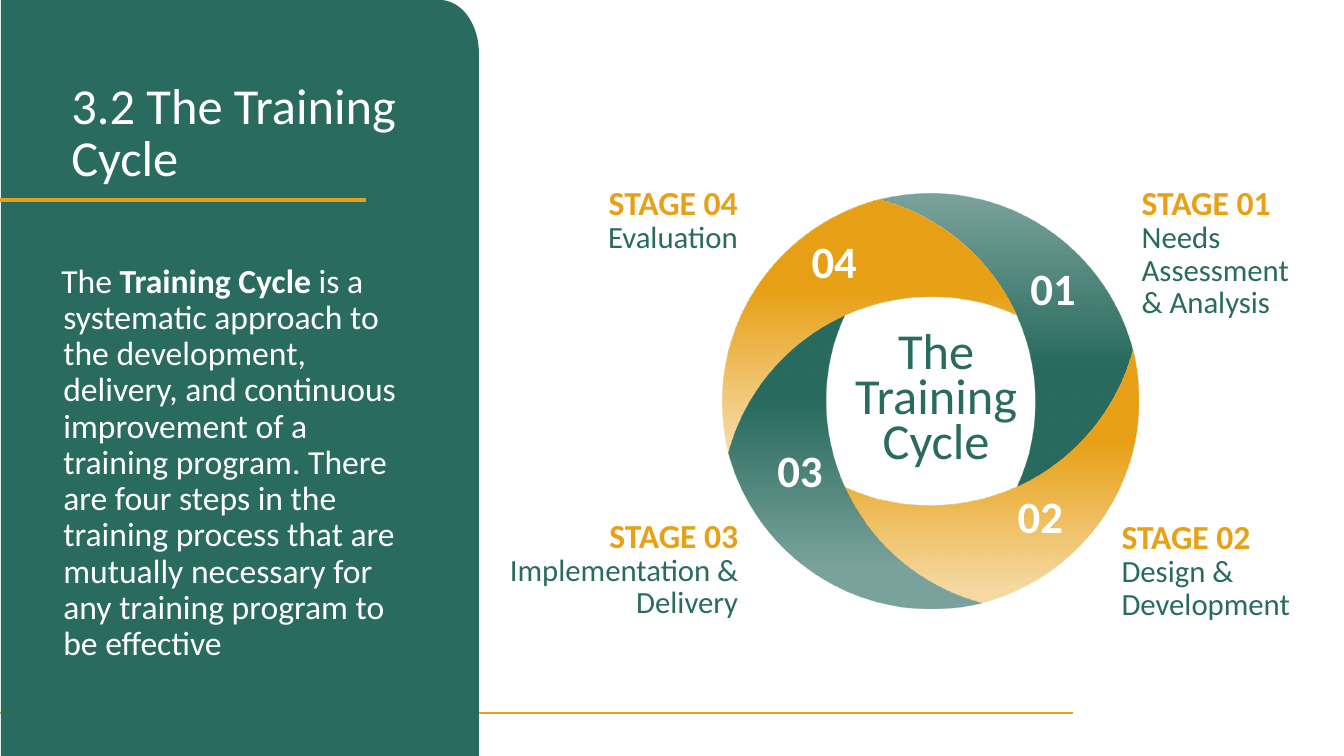
from dataclasses import dataclass

from lxml.etree import SubElement
from pptx import Presentation
from pptx.dml.color import RGBColor
from pptx.enum.shapes import MSO_CONNECTOR
from pptx.enum.text import PP_ALIGN
from pptx.oxml.ns import qn
from pptx.util import Inches, Pt

COLS, ROWS = 133.3, 75
GREEN, GOLD, WHITE = "296B5F", "E8A116", "FFFFFF"
FONT = "Calibri"
CENTRE = (92.3, 39.8)

Point = tuple[float, float]
Segment = list[Point]
Run = tuple[str, float, str, bool]


@dataclass(frozen=True)
class Shade:
    start: float
    end: float
    start_alpha: int
    end_alpha: int


@dataclass(frozen=True)
class Stage:
    number: str
    name: str
    label: tuple[float, float, float]
    align: PP_ALIGN
    badge: Point
    colour: str
    shade: Shade


GOLD_SHADE = Shade(0.36, 0.94, 100, 40)
STAGES = [
    Stage("01", "Needs Assessment & Analysis", (112.25, 18.35, 18.8), PP_ALIGN.LEFT,
          (98.65, 27.5), GREEN, Shade(0.01, 0.59, 62, 100)),
    Stage("02", "Design & Development", (110.25, 51.5, 28.5), PP_ALIGN.LEFT,
          (97.4, 50.1), GOLD, GOLD_SHADE),
    Stage("03", "Implementation & Delivery", (45.7, 51.35, 28.5), PP_ALIGN.RIGHT,
          (73.55, 45.5), GREEN, Shade(0.29, 0.85, 100, 62)),
    Stage("04", "Evaluation", (52.55, 18.35, 21.6), PP_ALIGN.RIGHT,
          (76.95, 24.8), GOLD, GOLD_SHADE),
]

BLADE_START = (0, -20.6)
BLADE = [
    [(-1.7, -20.6), (-3.4, -20.4), (-5.1, -20)],
    [(5.9, -17.1), (12.5, -5.9), (9.7, 5.2)],
    [(9.4, 6.3), (9, 7.4), (8.5, 8.5)],
    [(14.2, 5.9), (18.4, 0.9), (20, -5.1)],
    [(17.6, -14.2), (9.4, -20.6), BLADE_START],
]
PANEL = [
    [(36.2, 0)],
    [(38.4, 0), (40.1, 2.4), (40.1, 5.3)],
    [(40.1, ROWS)],
    [(0, ROWS)],
]

prs = Presentation()
prs.slide_width, prs.slide_height = Inches(13.33), Inches(7.5)
s = prs.slides.add_slide(prs.slide_layouts[6])


def rgb(colour: str) -> RGBColor:
    return RGBColor.from_string(colour)


def col(n: float) -> int:
    return round(prs.slide_width * n / COLS)


def row(n: float) -> int:
    return round(prs.slide_height * n / ROWS)


def add_outline(start: Point, segments: list[Segment], origin: Point, colour: str,
                turns: int = 0, shade: Shade | None = None) -> None:
    def place(point: Point) -> tuple[int, int]:
        x, y = point
        for _ in range(turns):
            x, y = -y, x
        return col(origin[0] + x), row(origin[1] + y)

    builder = s.shapes.build_freeform(*place(start), scale=1.0)
    builder.add_line_segments([place(pt) for seg in segments for pt in seg], close=True)
    sp = builder.convert_to_shape()
    steps = iter(list(sp.element.iter(qn("a:lnTo"))))
    for seg in segments:
        first, *rest = [next(steps) for _ in seg]
        if rest:
            first.tag = qn("a:cubicBezTo")
            for step in rest:
                first.append(step[0])
                step.getparent().remove(step)
    sp.shadow.inherit = False
    sp.line.fill.background()
    if shade is None:
        sp.fill.solid()
        sp.fill.fore_color.rgb = rgb(colour)
        return
    sp.fill.gradient()
    sp.fill.gradient_angle = 270
    for stop, position in zip(sp.fill.gradient_stops, (shade.start, shade.end)):
        stop.position = position
        stop.color.rgb = rgb(colour)
    alphas = (shade.start_alpha, shade.end_alpha)
    for clr, alpha in zip(sp.element.spPr.iter(qn("a:srgbClr")), alphas):
        if alpha < 100:
            SubElement(clr, qn("a:alpha")).set("val", str(alpha * 1000))


def add_rule(x1: float, x2: float, y: float, weight: float) -> None:
    line = s.shapes.add_connector(MSO_CONNECTOR.STRAIGHT, col(x1), row(y), col(x2), row(y))
    line.line.color.rgb = rgb(GOLD)
    line.line.width = Pt(weight)
    SubElement(line.element.spPr, qn("a:effectLst"))


def add_text(paragraphs: list[list[Run]], x: float, y: float, w: float, h: float = 8.5, *,
             align: PP_ALIGN = PP_ALIGN.LEFT, spacing: float = Pt(23.2),
             hanging: float = 0) -> None:
    tf = s.shapes.add_textbox(col(x), row(y), col(w), row(h)).text_frame
    tf.word_wrap = True
    for i, runs in enumerate(paragraphs):
        p = tf.paragraphs[0] if i == 0 else tf.add_paragraph()
        p.alignment = align
        p.line_spacing = spacing
        if hanging:
            pPr = p._p.get_or_add_pPr()
            pPr.set("marL", str(col(hanging)))
            pPr.set("indent", str(-col(hanging)))
        for text, size, colour, bold in runs:
            r = p.add_run()
            r.text = text
            r.font.name = FONT
            r.font.size = Pt(size)
            r.font.bold = bold
            r.font.color.rgb = rgb(colour)


def main() -> None:
    add_rule(0, 106.45, 70.7, 1.5)
    for left in (0.1, 7.4):
        add_outline((0, 0), PANEL, (left, 0), GREEN)
    add_rule(36.3, 0, 19.8, 2.75)
    add_text([[
        ("The ", 24, WHITE, False),
        ("Training Cycle ", 24, WHITE, True),
        ("is a systematic approach to the development, delivery, and continuous "
         "improvement of a training program. There are four steps in the training "
         "process that are mutually necessary for any training program to be effective",
         24, WHITE, False),
    ]], 5.1, 25.7, 35.9, 37.5, spacing=0.9, hanging=0.2)
    add_text([[("3.2 The Training Cycle", 36, WHITE, False)]],
             6.1, 7.7, 34.3, 8.8, spacing=Pt(37.2))
    for turns, stage in enumerate(STAGES):
        add_outline(BLADE_START, BLADE, CENTRE, stage.colour, turns, stage.shade)
    add_text([[("The Training Cycle", 36, GREEN, False)]],
             80.3, 32.7, 25.1, align=PP_ALIGN.CENTER, spacing=Pt(32.2))
    for stage in STAGES:
        add_text([[(f"STAGE {stage.number}", 24, GOLD, True)],
                  [(stage.name, 22, GREEN, False)]], *stage.label, align=stage.align)
    for stage in STAGES:
        add_text([[(stage.number, 32, WHITE, True)]], *stage.badge, 11.6,
                 align=PP_ALIGN.CENTER)
    prs.save("out.pptx")


if __name__ == "__main__":
    main()
